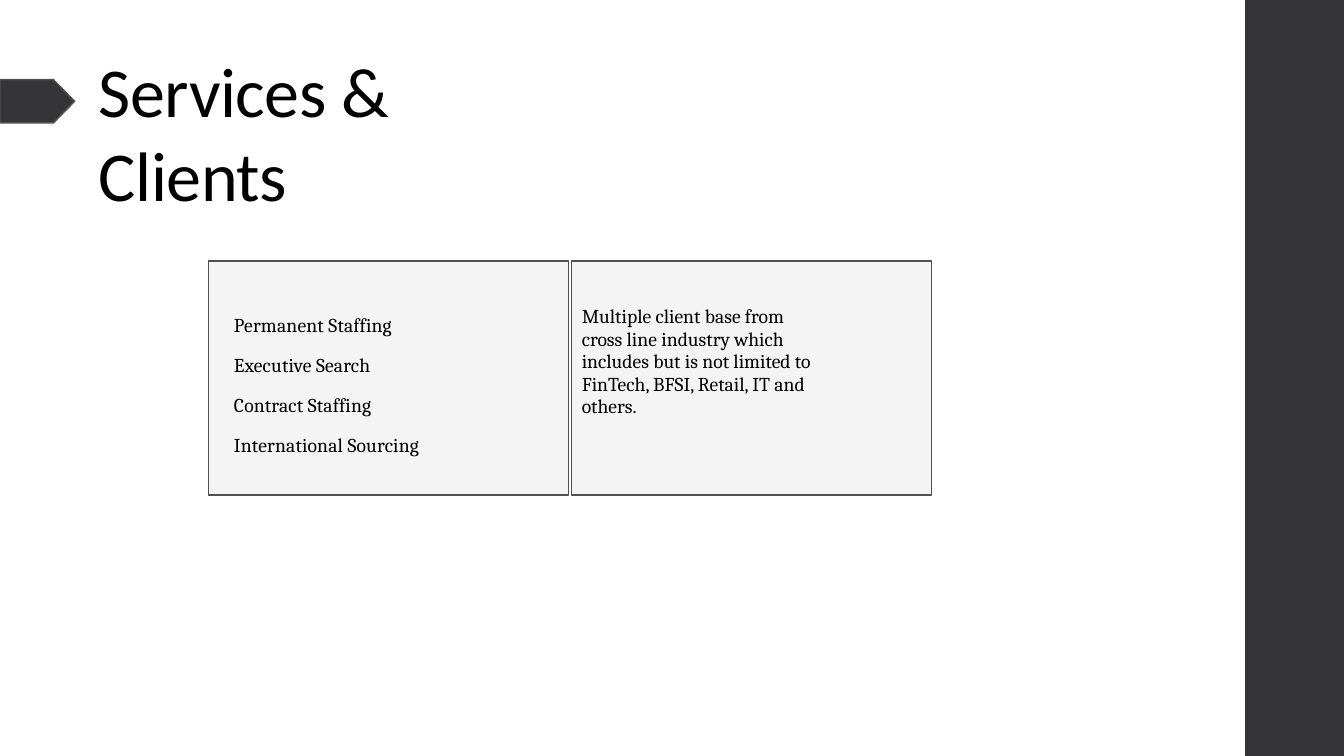
from lxml.etree import SubElement
from pptx import Presentation
from pptx.dml.color import RGBColor
from pptx.enum.shapes import MSO_SHAPE as Preset
from pptx.enum.text import MSO_ANCHOR as Anchor, MSO_AUTO_SIZE as AutoSize, PP_ALIGN as Align
from pptx.oxml.ns import qn
from pptx.util import Inches, Pt

COLORS = {"dark": "353537", "edge": "505052", "panel": "D9D9DB", "text": "000000"}


def color(key):
    return RGBColor.from_string(COLORS[key])


def write(frame, text, font="Cambria", size=14, pitch=None, tracking=0, insets=(0, 0, 0, 0)):
    frame.word_wrap = True
    frame.auto_size = AutoSize.NONE
    frame.vertical_anchor = Anchor.TOP
    frame.margin_left, frame.margin_top, frame.margin_right, frame.margin_bottom = map(Inches, insets)
    frame.text = text
    for paragraph in frame.paragraphs:
        properties = paragraph._p.get_or_add_pPr()
        properties.set("marL", "0")
        properties.set("indent", "0")
        SubElement(properties, qn("a:buNone"))
        paragraph.alignment = Align.LEFT
        paragraph.space_before = Pt(0)
        if pitch:
            paragraph.line_spacing = Pt(pitch)
        for run in paragraph.runs:
            run.font.name = font
            run.font.size = Pt(size)
            run.font.color.rgb = color("text")
            run._r.get_or_add_rPr().set("spc", str(round(tracking * 100)))


class ServicesSlide:
    def __init__(self, deck):
        self.slide = deck.slides.add_slide(deck.slide_layouts[3])
        self.edge_width = Pt(1.08)

    def place(self, shape, box):
        shape.left, shape.top, shape.width, shape.height = map(Inches, box)

    def outline(self, shape):
        shape.line.color.rgb = color("edge")
        shape.line.width = self.edge_width

    def decoration(self, preset, box, outlined=False):
        shape = self.slide.shapes.add_shape(preset, *map(Inches, box))
        shape.shadow.inherit = False
        shape.fill.solid()
        shape.fill.fore_color.rgb = color("dark")
        if outlined:
            self.outline(shape)
        else:
            shape.line.fill.background()
        return shape

    def title(self, text, box, **style):
        heading = self.slide.shapes.title
        self.place(heading, box)
        write(heading.text_frame, text, **style)

    def panel(self, number, text, box, **style):
        panel = self.slide.placeholders[number]
        self.place(panel, box)
        panel.fill.solid()
        panel.fill.fore_color.rgb = color("panel")
        tint = panel._element.spPr.find(qn("a:solidFill"))[0]
        SubElement(tint, qn("a:alpha"), val="27000")
        self.outline(panel)
        write(panel.text_frame, text, **style)


def main():
    deck = Presentation()
    deck.slide_width, deck.slide_height = Inches(13.33), Inches(7.5)
    page = ServicesSlide(deck)

    page.decoration(Preset.RECTANGLE, (12.35, 0, 0.98, 7.5))
    marker = page.decoration(Preset.PENTAGON, (0, 0.79, 0.74, 0.43), outlined=True)
    marker.adjustments[0] = 0.49

    page.title("Services & Clients", (0.97, 0.44, 4.9, 0.86),
               font="Calibri", size=50, tracking=-0.4, insets=(0.01, 0.03, 0.5, 0))

    services = ["Permanent Staffing", "Executive Search", "Contract Staffing", "International Sourcing"]
    clients = ("Multiple client base from cross line industry which includes "
               "but is not limited to FinTech, BFSI, Retail, IT and others.")
    panels = [
        ("\n".join(services), dict(pitch=28.6, tracking=0.1, insets=(0.25, 0.35, 0, 0))),
        (clients, dict(pitch=16, insets=(0.1, 0.44, 1.12, 0))),
    ]
    for column, (text, style) in enumerate(panels):
        page.panel(column + 1, text, (2.07 + column * 3.6, 2.59, 3.57, 2.32), **style)

    deck.save("out.pptx")


if __name__ == "__main__":
    main()
